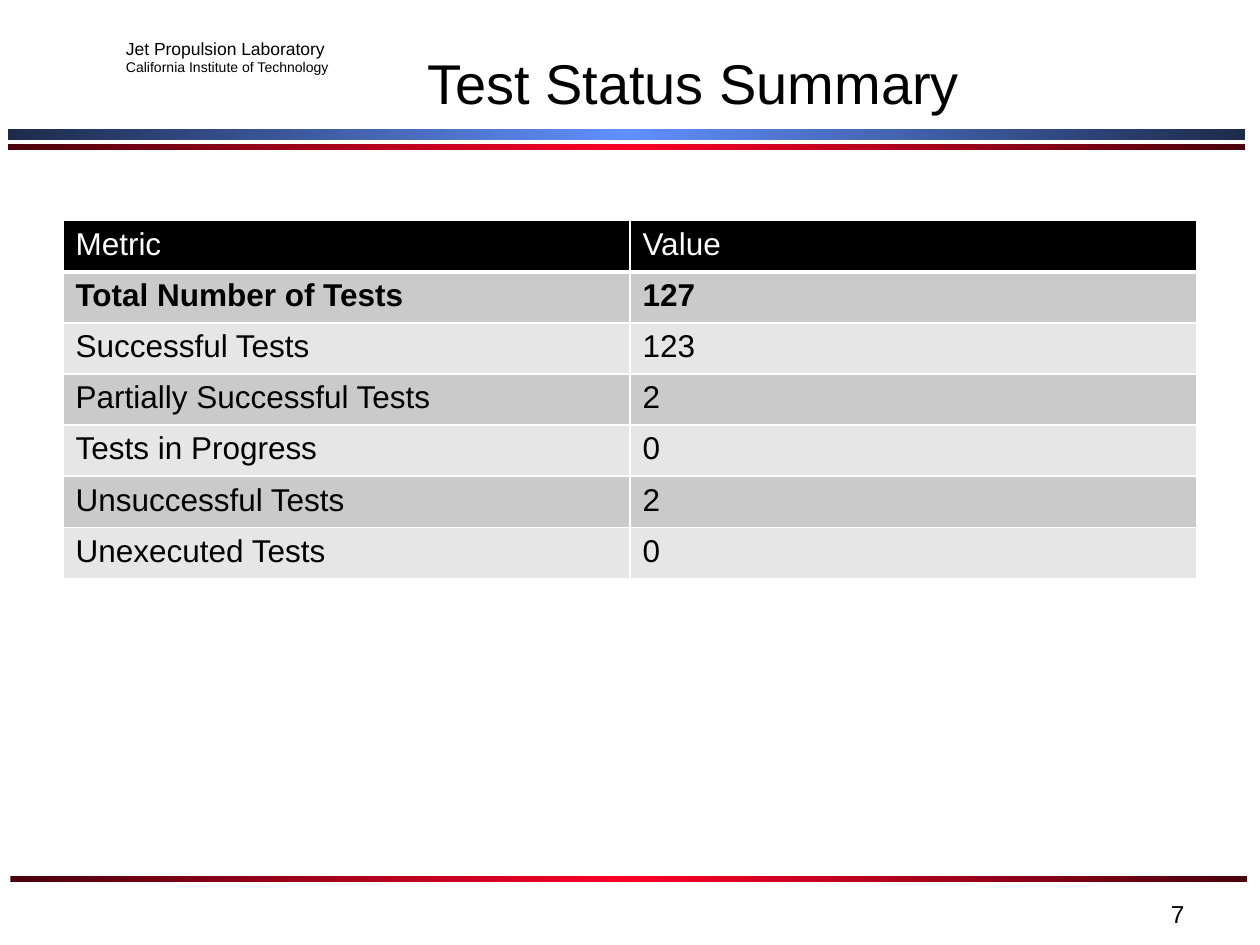
from copy import deepcopy

from lxml import etree
from pptx import Presentation
from pptx.dml.color import RGBColor
from pptx.enum.shapes import MSO_SHAPE
from pptx.enum.text import MSO_ANCHOR, PP_ALIGN
from pptx.oxml.ns import qn
from pptx.util import Cm, Pt

RECTANGLE = MSO_SHAPE.RECTANGLE
TOP, MIDDLE = MSO_ANCHOR.TOP, MSO_ANCHOR.MIDDLE
LEFT, CENTER, RIGHT = PP_ALIGN.LEFT, PP_ALIGN.CENTER, PP_ALIGN.RIGHT
FONT = "Arial"
COLORS = {
    "black": "000000", "white": "FFFFFF",
    "dark_row": "CACACA", "light_row": "E6E6E6",
    "navy": "1D2B4B", "blue": "618FFD",
    "maroon": "4B000C", "red": "FC0128",
}


def style(paragraph, size, color="black", bold=False):
    font = paragraph.runs[0].font
    font.name = FONT
    font.size = Pt(size)
    font.bold = bold
    font.color.rgb = RGBColor.from_string(COLORS[color])


def border(cell, side, width):
    line = etree.SubElement(cell._tc.get_or_add_tcPr(), qn(f"a:{side}"), w=str(Pt(width)))
    fill = etree.SubElement(line, qn("a:solidFill"))
    etree.SubElement(fill, qn("a:srgbClr"), val=COLORS["white"])


prs = Presentation()
prs.slide_width, prs.slide_height = Cm(25.4), Cm(19.05)
slide = prs.slides.add_slide(prs.slide_layouts[6])

rules = [
    (0.16, 2.61, 0.21, "navy", "blue"),
    (0.16, 2.91, 0.12, "maroon", "red"),
    (0.21, 17.66, 0.12, "maroon", "red"),
]
for left, top, height, edge, middle in rules:
    rule = slide.shapes.add_shape(RECTANGLE, Cm(left), Cm(top), Cm(24.94), Cm(height))
    rule.shadow.inherit = False
    rule.line.fill.background()
    rule.fill.gradient()
    rule.fill.gradient_angle = 0
    stop_list = rule._element.spPr.find(".//" + qn("a:gsLst"))
    stop_list.append(deepcopy(stop_list[-1]))
    for stop, position, color in zip(rule.fill.gradient_stops, (0, 0.5, 1), (edge, middle, edge)):
        stop.position = position
        stop.color.rgb = RGBColor.from_string(COLORS[color])

texts = [
    (2.29, 0.64, 4.7, 1.02, TOP, LEFT,
     [("Jet Propulsion Laboratory", 10), ("California Institute of Technology", 8)]),
    (6.78, 0.76, 14.4, 1.78, MIDDLE, CENTER, [("Test Status Summary", 32)]),
    (18.21, 18, 5.92, 0.69, TOP, RIGHT, [("7", 14)]),
]
for left, top, width, height, anchor, alignment, lines in texts:
    frame = slide.shapes.add_textbox(Cm(left), Cm(top), Cm(width), Cm(height)).text_frame
    frame.word_wrap = True
    frame.vertical_anchor = anchor
    frame.text = "\n".join(line for line, size in lines)
    for paragraph, (line, size) in zip(frame.paragraphs, lines):
        paragraph.alignment = alignment
        style(paragraph, size)

metrics = [
    ("Metric", "Value"),
    ("Total Number of Tests", "127"),
    ("Successful Tests", "123"),
    ("Partially Successful Tests", "2"),
    ("Tests in Progress", "0"),
    ("Unsuccessful Tests", "2"),
    ("Unexecuted Tests", "0"),
]
row_height = 1.03
summary = slide.shapes.add_table(
    len(metrics), 2, Cm(1.27), Cm(4.45), Cm(22.86), Cm(row_height * len(metrics))
).table
for row_index, metric in enumerate(metrics):
    summary.rows[row_index].height = Cm(row_height)
    is_header = row_index == 0
    row_color = "black" if is_header else "dark_row" if row_index % 2 else "light_row"
    for column_index, value in enumerate(metric):
        cell = summary.cell(row_index, column_index)
        cell.text = value
        style(cell.text_frame.paragraphs[0], 18,
              "white" if is_header else "black", bold=row_index == 1)
        for side in ("lnL", "lnR", "lnT", "lnB"):
            header_edge = (is_header and side == "lnB") or (row_index == 1 and side == "lnT")
            border(cell, side, 3 if header_edge else 1)
        cell.fill.solid()
        cell.fill.fore_color.rgb = RGBColor.from_string(COLORS[row_color])

prs.save("out.pptx")
